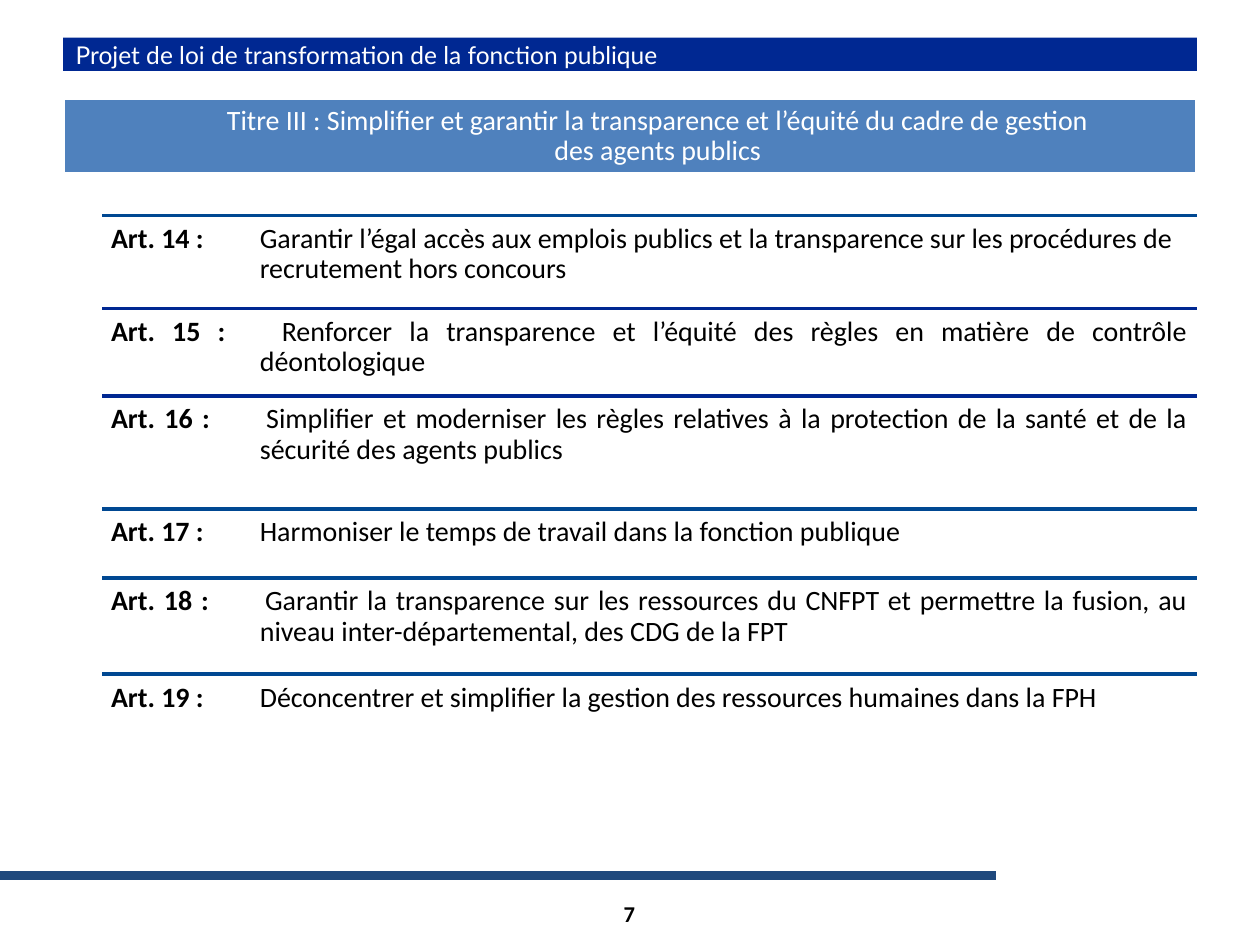
from lxml.etree import SubElement
from pptx import Presentation
from pptx.dml.color import RGBColor
from pptx.enum.shapes import MSO_CONNECTOR as Connector, MSO_SHAPE as Shape
from pptx.enum.text import MSO_ANCHOR as Anchor, MSO_AUTO_SIZE as AutoSize, PP_ALIGN as Align
from pptx.oxml.ns import qn
from pptx.util import Cm, Pt

NAVY, BLUE, STEEL, FOOTER = "002892", "004892", "4F81BD", "1F497D"
WHITE, BLACK = "FFFFFF", "000000"
LIST_LEFT, LIST_WIDTH = 2.06, 22.06
LABEL_WIDTH = 3
INSET = 0.18

# Label, text, top (cm), height (cm), rule colour, alignment
ARTICLES = [
    ("Art. 14 :", "Garantir l’égal accès aux emplois publics et la transparence sur les "
     "procédures de recrutement hors concours", 4.34, 1.88, BLUE, Align.LEFT),
    ("Art. 15 :", "Renforcer la transparence et l’équité des règles en matière de "
     "contrôle déontologique", 6.22, 1.76, NAVY, Align.JUSTIFY),
    ("Art. 16 :", "Simplifier et moderniser les règles relatives à la protection de la "
     "santé et de la sécurité des agents publics", 7.98, 2.28, NAVY, Align.JUSTIFY),
    ("Art. 17 :", "Harmoniser le temps de travail dans la fonction publique",
     10.26, 1.38, BLUE, Align.LEFT),
    ("Art. 18 :", "Garantir la transparence sur les ressources du CNFPT et permettre la "
     "fusion, au niveau inter-départemental, des CDG de la FPT",
     11.65, 1.93, BLUE, Align.JUSTIFY),
    ("Art. 19 :", "Déconcentrer et simplifier la gestion des ressources humaines dans la FPH",
     13.59, 1.75, BLUE, Align.LEFT),
]


def colour(code):
    return RGBColor.from_string(code)


def add_span(para, text, size=16, code=BLACK, bold=False, font="Calibri"):
    span = para.add_run()
    span.text = text
    span.font.name = font
    span.font.size = Pt(size)
    span.font.bold = bold
    span.font.color.rgb = colour(code)


def set_frame(box, anchor, insets=None):
    frame = box.text_frame
    frame.word_wrap = True
    frame.auto_size = AutoSize.NONE
    frame.vertical_anchor = anchor
    if insets:
        (frame.margin_left, frame.margin_top,
         frame.margin_right, frame.margin_bottom) = map(Cm, insets)
    return frame.paragraphs[0]


def add_rule(page, left, right, top, code, width):
    rule = page.shapes.add_connector(
        Connector.STRAIGHT, Cm(left), Cm(top), Cm(right), Cm(top))
    rule.line.color.rgb = colour(code)
    rule.line.width = Pt(width)
    SubElement(rule._element.spPr, qn("a:effectLst"))


def set_hanging_tab(para, indent):
    props = para._p.get_or_add_pPr()
    props.set("marL", str(Cm(indent)))
    props.set("indent", str(-Cm(indent)))
    tabs = SubElement(props, qn("a:tabLst"))
    SubElement(tabs, qn("a:tab"), pos=str(Cm(indent)), algn="l")


def set_title(page, text):
    title = page.shapes.title
    title.left, title.top, title.width, title.height = map(Cm, (1.27, 0.76, 22.86, 0.67))
    title.fill.solid()
    title.fill.fore_color.rgb = colour(NAVY)
    para = set_frame(title, Anchor.MIDDLE)
    para.alignment = Align.LEFT
    add_span(para, text, size=14, code=WHITE, font="Lato")


def add_banner(page, lines):
    banner = page.shapes.add_shape(
        Shape.RECTANGLE, Cm(1.27), Cm(1.98), Cm(22.86), Cm(1.53))
    banner.shadow.inherit = False
    banner.fill.solid()
    banner.fill.fore_color.rgb = colour(STEEL)
    banner.line.color.rgb = colour(WHITE)
    banner.line.width = Pt(2)
    para = set_frame(banner, Anchor.MIDDLE, (1.22, 0.1, 0.1, 0.1))
    para.alignment = Align.CENTER
    para.line_spacing = 0.9
    for index, line in enumerate(lines):
        if index:
            para.add_line_break()
        add_span(para, line, code=WHITE)


def add_article(page, label, text, top, height, code, alignment):
    add_rule(page, LIST_LEFT, LIST_LEFT + LIST_WIDTH, top, code, 2)
    box = page.shapes.add_textbox(Cm(LIST_LEFT), Cm(top), Cm(LIST_WIDTH), Cm(height))
    para = set_frame(box, Anchor.TOP, [INSET] * 4)
    set_hanging_tab(para, LABEL_WIDTH)
    para.alignment = alignment
    para.line_spacing = 0.9
    add_span(para, label, bold=True)
    add_span(para, "\t" + text)


def add_footer(page, number):
    add_rule(page, 0, 20.07, 17.65, FOOTER, 5)
    box = page.shapes.add_textbox(Cm(9.73), Cm(17.91), Cm(5.92), Cm(1.02))
    para = set_frame(box, Anchor.MIDDLE)
    para.alignment = Align.CENTER
    add_span(para, number, size=12.9, bold=True)


def main():
    deck = Presentation()
    deck.slide_width, deck.slide_height = Cm(25.4), Cm(19.05)
    page = deck.slides.add_slide(deck.slide_layouts[5])

    # Headings
    set_title(page, "Projet de loi de transformation de la fonction publique")
    add_banner(page, ["Titre III : Simplifier et garantir la transparence et l’équité "
                      "du cadre de gestion", "des agents publics"])

    # List of articles
    for article in ARTICLES:
        add_article(page, *article)

    # Footer
    add_footer(page, "7")
    deck.save("out.pptx")


if __name__ == "__main__":
    main()
